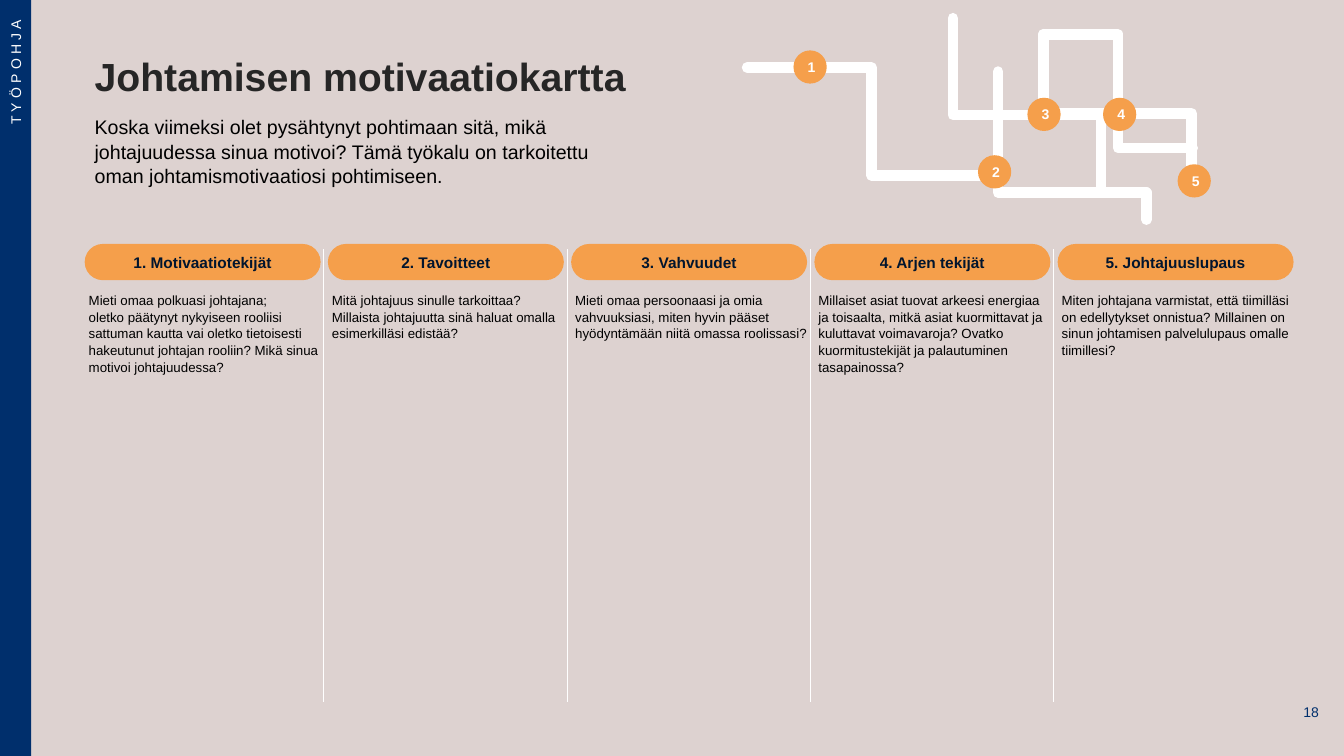
from lxml.etree import SubElement
from pptx import Presentation
from pptx.dml.color import RGBColor
from pptx.enum.shapes import MSO_CONNECTOR, MSO_SHAPE
from pptx.enum.text import MSO_ANCHOR, PP_ALIGN
from pptx.oxml.ns import qn
from pptx.util import Inches, Pt

BACKGROUND = RGBColor(0xDD, 0xD2, 0xD0)
ORANGE = RGBColor(0xF5, 0x9F, 0x4B)
NAVY = RGBColor(0x00, 0x2F, 0x6C)
INK = RGBColor(0x01, 0x15, 0x2E)
CHARCOAL = RGBColor(0x26, 0x26, 0x26)
BLACK = RGBColor(0, 0, 0)
WHITE = RGBColor(0xFF, 0xFF, 0xFF)

LEFT, COLUMN_WIDTH = 0.84, 2.34
COLUMN_STEP = (10.49 - LEFT) / 4
STOP_SIZE = 0.33

COLUMNS = [
    ("1. Motivaatiotekijät",
     "Mieti omaa polkuasi johtajana; \voletko päätynyt nykyiseen rooliisi sattuman kautta vai "
     "oletko tietoisesti hakeutunut johtajan rooliin? Mikä sinua motivoi johtajuudessa?"),
    ("2. Tavoitteet",
     "Mitä johtajuus sinulle tarkoittaa? Millaista johtajuutta sinä haluat omalla "
     "esimerkilläsi edistää?"),
    ("3. Vahvuudet",
     "Mieti omaa persoonaasi ja omia vahvuuksiasi, miten hyvin pääset hyödyntämään niitä "
     "omassa roolissasi?"),
    ("4. Arjen tekijät",
     "Millaiset asiat tuovat arkeesi energiaa ja toisaalta, mitkä asiat kuormittavat ja "
     "kuluttavat voimavaroja? Ovatko kuormitustekijät ja palautuminen tasapainossa?"),
    ("5. Johtajuuslupaus",
     "Miten johtajana varmistat, että tiimilläsi on edellytykset onnistua? Millainen on "
     "sinun johtamisen palvelulupaus omalle tiimillesi?"),
]
INTRO = ("Koska viimeksi olet pysähtynyt pohtimaan sitä, mikä johtajuudessa sinua motivoi? "
         "Tämä työkalu on tarkoitettu oman johtamismotivaatiosi pohtimiseen.")

ROUTES = [
    ((10.35, 0.34, 1.47, 1.47), 0.534, True),
    ((9.34, 0.29, 1.69, 1.47), 0.568, True),
    ((9.9, 0.71, 1.47, 1.47), 0.818, True),
    ((10.35, 0.34, 1.48, 1.13), 0.5, False),
    ((7.41, 0.67, 2.47, 1.07), 0.5, False),
]
STOPS = [("1", 7.87, 0.5), ("5", 11.68, 1.63), ("2", 9.7, 1.54),
         ("4", 10.94, 0.97), ("3", 10.19, 0.97)]


def set_text(sp, text, size, color, bold=False, align=PP_ALIGN.LEFT, anchor=MSO_ANCHOR.TOP,
             insets=(0.1, 0.05, 0.1, 0.05), spacing=1.0, after=0):
    """Write one formatted paragraph into a shape."""
    tf = sp.text_frame
    frame = dict(zip(("margin_left", "margin_top", "margin_right", "margin_bottom"),
                     map(Inches, insets)), word_wrap=True, vertical_anchor=anchor)
    for name, value in frame.items():
        setattr(tf, name, value)
    p = tf.paragraphs[0]
    p.text = text
    paragraph = {"alignment": align, "line_spacing": spacing, "space_after": Pt(after)}
    for name, value in paragraph.items():
        setattr(p, name, value)
    for r in p.runs:
        r.font.color.rgb = color
        for name, value in {"name": "Arial", "size": Pt(size), "bold": bold}.items():
            setattr(r.font, name, value)
    return p


def add_label(s, box, text, size, color, **style):
    """Add a wrapped text box."""
    sp = s.shapes.add_textbox(*map(Inches, box))
    set_text(sp, text, size, color, **style)


def add_filled(shapes, kind, box, fill):
    """Add a flat preset shape without outline."""
    sp = shapes.add_shape(kind, *map(Inches, box))
    sp.shadow.inherit = False
    sp.fill.solid()
    sp.fill.fore_color.rgb = fill
    sp.line.fill.background()
    return sp


def add_white_line(shapes, kind, start, end, width):
    """Add a white connector without shadow."""
    line = shapes.add_connector(kind, *map(Inches, start + end))
    line.line.color.rgb = WHITE
    line.line.width = Pt(width)
    SubElement(line._element.spPr, qn("a:effectLst"))
    return line


def add_route(shapes, box, bend, turned):
    """Add a thick elbow route with rounded ends and corners."""
    x, y, w, h = box
    route = add_white_line(shapes, MSO_CONNECTOR.ELBOW, (x, y), (x + w, y + h), 7.5)
    sp_pr = route._element.spPr
    if turned:
        xfrm = sp_pr.find(qn("a:xfrm"))
        xfrm.set("rot", "16200000")
        xfrm.set("flipH", "1")
    guides = sp_pr.find(qn("a:prstGeom")).find(qn("a:avLst"))
    SubElement(guides, qn("a:gd"), name="adj1", fmla=f"val {round(bend * 100000)}")
    ln = sp_pr.find(qn("a:ln"))
    ln.set("cap", "rnd")
    SubElement(ln, qn("a:round"))


def add_map(s):
    """Draw the grouped route map with its numbered stops."""
    shapes = s.shapes.add_group_shape().shapes
    for route in ROUTES:
        add_route(shapes, *route)
    for number, x, y in STOPS:
        stop = add_filled(shapes, MSO_SHAPE.OVAL, (x, y, STOP_SIZE, STOP_SIZE), ORANGE)
        set_text(stop, number, 10, WHITE, bold=True, align=PP_ALIGN.CENTER,
                 anchor=MSO_ANCHOR.MIDDLE, insets=(0.03, 0, 0, 0))


def add_column(s, index, heading, question):
    """Add one column: heading pill, question and divider."""
    x = LEFT + index * COLUMN_STEP
    pill = add_filled(s.shapes, MSO_SHAPE.ROUNDED_RECTANGLE, (x, 2.42, COLUMN_WIDTH, 0.36), ORANGE)
    pill.adjustments[0] = 0.5
    set_text(pill, heading, 11, INK, bold=True, align=PP_ALIGN.CENTER,
             anchor=MSO_ANCHOR.MIDDLE, after=6)
    add_label(s, (x, 2.84, COLUMN_WIDTH, 1.27), question, 9.5, BLACK,
              insets=(0.04, 0.05, 0, 0.05), spacing=1.05, after=6)
    if index:
        divider = x - 0.04
        add_white_line(s.shapes, MSO_CONNECTOR.STRAIGHT, (divider, 2.47), (divider, 6.96), 0.75)


def add_side_band(s):
    """Add the navy band with its upward-reading label."""
    band = add_filled(s.shapes, MSO_SHAPE.RECTANGLE, (0, 0, 0.31, 7.5), NAVY)
    p = set_text(band, "TYÖPOHJA", 10, WHITE, align=PP_ALIGN.RIGHT, anchor=MSO_ANCHOR.MIDDLE,
                 insets=(0.1, 0.2, 0.1, 0.05))
    band.text_frame._txBody.bodyPr.set("vert", "vert270")
    p.runs[0]._r.get_or_add_rPr().set("spc", "300")


def main():
    """Build and save the slide."""
    prs = Presentation()
    prs.slide_width, prs.slide_height = Inches(13.33), Inches(7.5)
    s = prs.slides.add_slide(prs.slide_layouts[6])
    s.background.fill.solid()
    s.background.fill.fore_color.rgb = BACKGROUND
    for index, (heading, question) in enumerate(COLUMNS):
        add_column(s, index, heading, question)
    add_label(s, (LEFT, 0.47, 11.29, 1.42), "Johtamisen motivaatiokartta", 28, CHARCOAL, bold=True)
    add_label(s, (12.51, 6.92, 0.59, 0.29), "18", 10, NAVY, align=PP_ALIGN.RIGHT,
              anchor=MSO_ANCHOR.MIDDLE, insets=(0.1, 0.05, 0.02, 0.05))
    add_label(s, (LEFT, 1.08, 5.55, 0.85), INTRO, 14, BLACK, spacing=1.05, after=6)
    add_map(s)
    add_side_band(s)
    prs.save("out.pptx")


if __name__ == "__main__":
    main()
